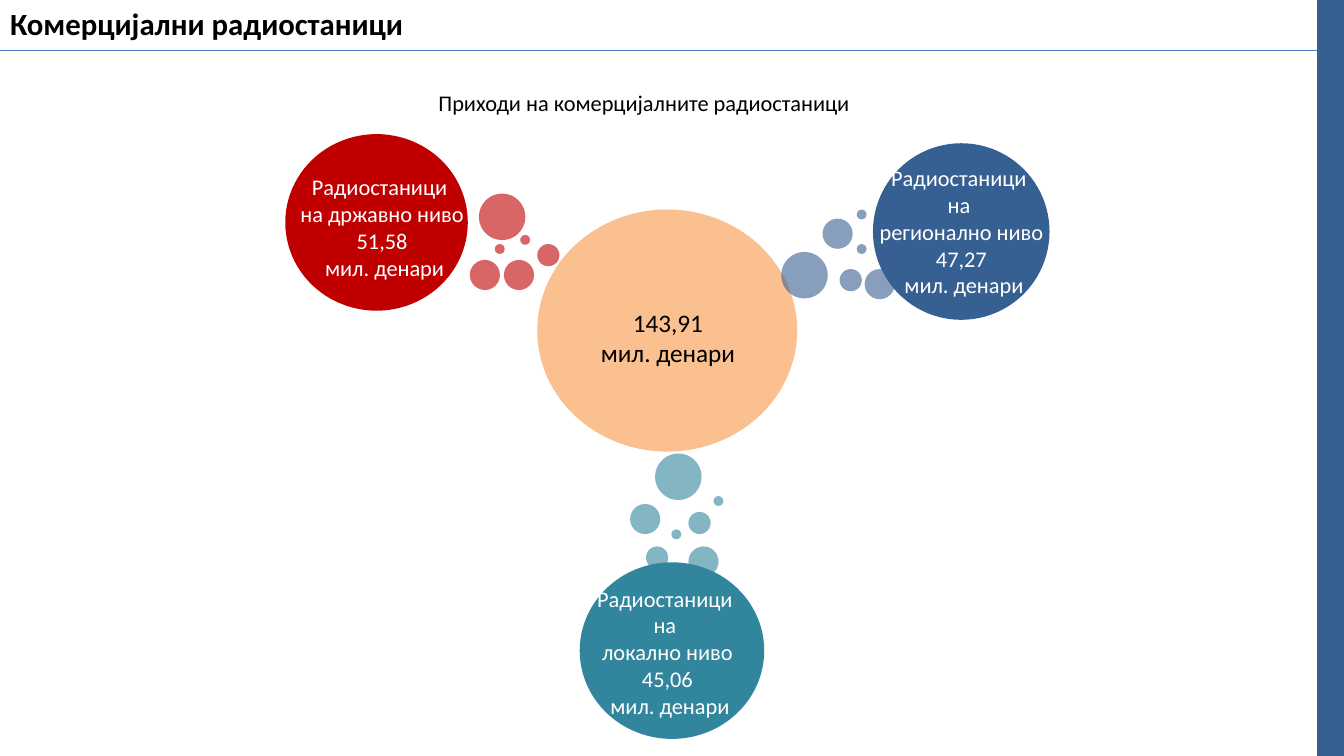
"""Build the slide on the revenue of commercial radio stations."""
from lxml import etree
from pptx import Presentation
from pptx import util as u
from pptx.dml.color import RGBColor
from pptx.enum import shapes, text
from pptx.oxml.ns import qn

COLOURS = {"state": "C00000", "regional": "376092", "local": "31859C", "total": "FAC090",
           "rule": "4B7EBC", "dark": "000000", "light": "FFFFFF"}
SLIDE_SIZE = (33.87, 19.05)
TITLE = ("Комерцијални радиостаници", (0, 0, 13.34, 1.19))
SUBTITLE = ("Приходи на комерцијалните радиостаници", (10.8, 2.11, 11.63, 0.94))
RULE_TOP = 1.27
SIDE_BAR = (33.22, 0, 0.64, 19.05)

CIRCLES = {
    "total": (13.54, 5.28, 6.55, 6.1),
    "regional": (22, 3.61, 4.45, 4.45),
    "local": (14.61, 14.17, 4.65, 4.45),
    "state": (7.19, 3.38, 4.6, 4.45),
}
LABELS = {
    "state": (["Радиостаници ", "на државно ниво", "51,58", " мил. денари"],
              (7.19, 4.24, 4.88, 3)),
    "regional": (["Радиостаници ", "на ", "регионално ниво", "47,27", " мил. денари"],
                 (21.79, 4.01, 4.88, 3.68)),
    "local": (["Радиостаници ", "на ", "локално ниво", "45,06", " мил. денари"],
              (14.38, 14.61, 4.88, 3.68)),
    "total": (["143,91", "мил. денари"], (14.61, 7.62, 4.45, 1.8)),
}
BUBBLE_SIZES = {"large": 1.17, "medium": 0.76, "small": 0.56, "tiny": 0.25}
BUBBLES = {
    "state": {"large": [(12.07, 4.88)], "medium": [(11.84, 6.55), (12.7, 6.55)],
              "small": [(13.54, 6.15)], "tiny": [(12.47, 6.15), (13.11, 5.92)]},
    "local": {"large": [(16.51, 11.43)], "medium": [(15.88, 12.7), (17.35, 13.77)],
              "small": [(16.28, 13.77), (17.35, 12.9)], "tiny": [(16.92, 13.34), (17.98, 12.5)]},
    "regional": {"large": [(19.69, 6.35)], "medium": [(20.73, 5.51), (21.79, 6.78)],
                 "small": [(21.16, 6.78)], "tiny": [(21.59, 6.15), (21.59, 5.28)]},
}


def colour(name):
    """Return the named colour."""
    return RGBColor.from_string(COLOURS[name])


def lengths(values):
    """Turn centimetres into slide lengths."""
    return [u.Cm(value) for value in values]


def write(shape, lines, size=16, fill="dark", bold=False, align=text.PP_ALIGN.LEFT):
    """Write one paragraph per line in the given format."""
    frame = shape.text_frame
    frame.word_wrap = True
    frame.auto_size = text.MSO_AUTO_SIZE.NONE
    frame.vertical_anchor = text.MSO_ANCHOR.TOP
    for index, line in enumerate(lines):
        paragraph = frame.add_paragraph() if index else frame.paragraphs[0]
        paragraph.alignment = align
        run = paragraph.add_run()
        run.text = line
        run.font.name = "Calibri"
        run.font.size = u.Pt(size)
        run.font.bold = bold
        run.font.color.rgb = colour(fill)


def add_filled(slide, kind, box, fill, opacity=100):
    """Add a filled shape without outline or shadow."""
    shape = slide.shapes.add_shape(kind, *lengths(box))
    shape.shadow.inherit = False
    shape.fill.solid()
    shape.fill.fore_color.rgb = colour(fill)
    shape.line.fill.background()
    if opacity < 100:
        tint = shape.fill._xPr.find(qn("a:solidFill"))[0]
        etree.SubElement(tint, qn("a:alpha")).set("val", str(opacity * 1000))
    return shape


def add_rule(slide):
    """Add the line under the title."""
    rule = slide.shapes.add_connector(
        shapes.MSO_CONNECTOR.STRAIGHT, *lengths((0, RULE_TOP, SLIDE_SIZE[0], RULE_TOP)))
    rule.line.color.rgb = colour("rule")
    rule.line.width = u.Pt(0.75)
    etree.SubElement(rule._element.spPr, qn("a:effectLst"))


def main():
    """Assemble and save the slide."""
    presentation = Presentation()
    presentation.slide_width, presentation.slide_height = lengths(SLIDE_SIZE)
    slide = presentation.slides.add_slide(presentation.slide_layouts[5])
    oval = shapes.MSO_SHAPE.OVAL

    for group, box in CIRCLES.items():
        add_filled(slide, oval, box, group)
    for group, sizes in BUBBLES.items():
        for size, places in sizes.items():
            diameter = BUBBLE_SIZES[size]
            for left, top in places:
                add_filled(slide, oval, (left, top, diameter, diameter), group, opacity=60)

    add_rule(slide)
    title = slide.shapes.title
    title.left, title.top, title.width, title.height = lengths(TITLE[1])
    write(title, [TITLE[0]], size=22, bold=True)
    write(slide.shapes.add_textbox(*lengths(SUBTITLE[1])), [SUBTITLE[0]])
    for group, (lines, box) in LABELS.items():
        is_total = group == "total"
        write(slide.shapes.add_textbox(*lengths(box)), lines, size=18 if is_total else 16,
              fill="dark" if is_total else "light", align=text.PP_ALIGN.CENTER)

    side_bar = add_filled(slide, shapes.MSO_SHAPE.RECTANGLE, SIDE_BAR, "regional")
    side_bar.line.color.rgb = colour("regional")
    side_bar.line.width = u.Pt(2)
    presentation.save("out.pptx")


if __name__ == "__main__":
    main()
